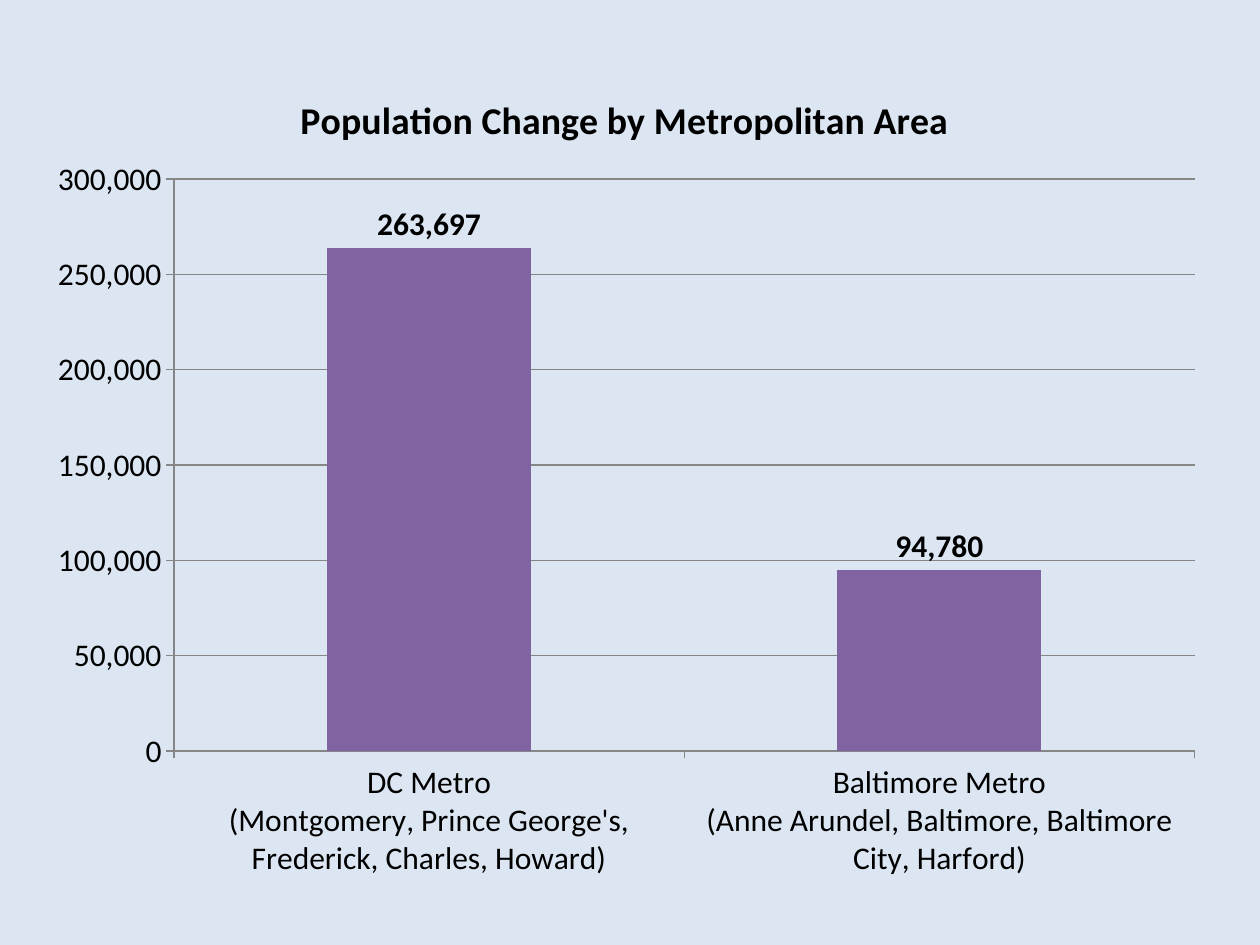
from lxml import etree
from pptx import Presentation
from pptx import util as u
from pptx.chart.data import CategoryChartData
from pptx.dml.color import RGBColor
from pptx.enum import chart as ch
from pptx.oxml.ns import qn

BACKGROUND = "DCE6F2"
PURPLE = "8064A2"
GREY = "868686"
BLACK = "000000"
NUMBER_FORMAT = "#,##0"
POPULATION_CHANGE = {
    "DC Metro\n(Montgomery, Prince George's, Frederick, Charles, Howard)": 263697,
    "Baltimore Metro\n(Anne Arundel, Baltimore, Baltimore City, Harford)": 94780,
}
PLOT_AREA = {"x": 0.12, "y": 0.14, "w": 0.86, "h": 0.69}


def paint(fill, color):
    fill.solid()
    fill.fore_color.rgb = RGBColor.from_string(color)


def style_font(font, **values):
    settings = {"name": "Calibri", "size": u.Pt(18), "bold": False, **values}
    for name, value in settings.items():
        setattr(font, name, value)
    paint(font.fill, BLACK)


def style_line(line):
    paint(line.fill, GREY)
    line.width = u.Pt(0.75)


def place_plot(chart, fractions):
    """Fix the inner plot area as fractions of the chart frame."""
    plot_area = chart.plots[0]._element.getparent()
    layout = plot_area.find(qn("c:layout"))
    if layout is None:
        layout = etree.Element(qn("c:layout"))
        plot_area.insert(0, layout)
    manual = etree.SubElement(layout, qn("c:manualLayout"))
    settings = {"layoutTarget": "inner", "xMode": "edge", "yMode": "edge", **fractions}
    for name, value in settings.items():
        etree.SubElement(manual, qn(f"c:{name}")).set("val", str(value))


def add_title(chart, title):
    chart.has_title = True
    frame = chart.chart_title.text_frame
    frame.text = title
    style_font(frame.paragraphs[0].runs[0].font, size=u.Pt(21.6), bold=True)
    chart.chart_title.include_in_layout = False


def style_axes(chart):
    for axis in (chart.category_axis, chart.value_axis):
        axis.major_tick_mark = ch.XL_TICK_MARK.OUTSIDE
        axis.minor_tick_mark = ch.XL_TICK_MARK.NONE
        style_line(axis.format.line)
        style_font(axis.tick_labels.font)
    values = chart.value_axis
    values.minimum_scale, values.maximum_scale, values.major_unit = 0, 300000, 50000
    values.has_major_gridlines = True
    style_line(values.major_gridlines.format.line)
    values.tick_labels.number_format = NUMBER_FORMAT
    values.tick_labels.number_format_is_linked = False


def style_columns(plot):
    plot.gap_width = 150
    plot.vary_by_categories = False
    paint(plot.series[0].format.fill, PURPLE)
    plot.has_data_labels = True
    labels = plot.data_labels
    settings = {
        "show_value": True,
        "number_format": NUMBER_FORMAT,
        "number_format_is_linked": False,
        "position": ch.XL_LABEL_POSITION.OUTSIDE_END,
    }
    for name, value in settings.items():
        setattr(labels, name, value)
    style_font(labels.font, bold=True)


def add_column_chart(page, title, values):
    data = CategoryChartData(number_format=NUMBER_FORMAT)
    data.categories = list(values)
    data.add_series("Series 1", list(values.values()))
    bounds = [u.Inches(n) for n in (0.25, 0.5, 9.42, 6.58)]
    chart = page.shapes.add_chart(ch.XL_CHART_TYPE.COLUMN_CLUSTERED, *bounds, data).chart
    chart.has_legend = False
    style_font(chart.font)
    add_title(chart, title)
    style_axes(chart)
    style_columns(chart.plots[0])
    place_plot(chart, PLOT_AREA)


def main():
    deck = Presentation()
    deck.slide_width, deck.slide_height = u.Inches(10), u.Inches(7.5)
    page = deck.slides.add_slide(deck.slide_layouts[6])
    paint(page.background.fill, BACKGROUND)
    add_column_chart(page, "Population Change by Metropolitan Area", POPULATION_CHANGE)
    deck.save("out.pptx")


if __name__ == "__main__":
    main()
